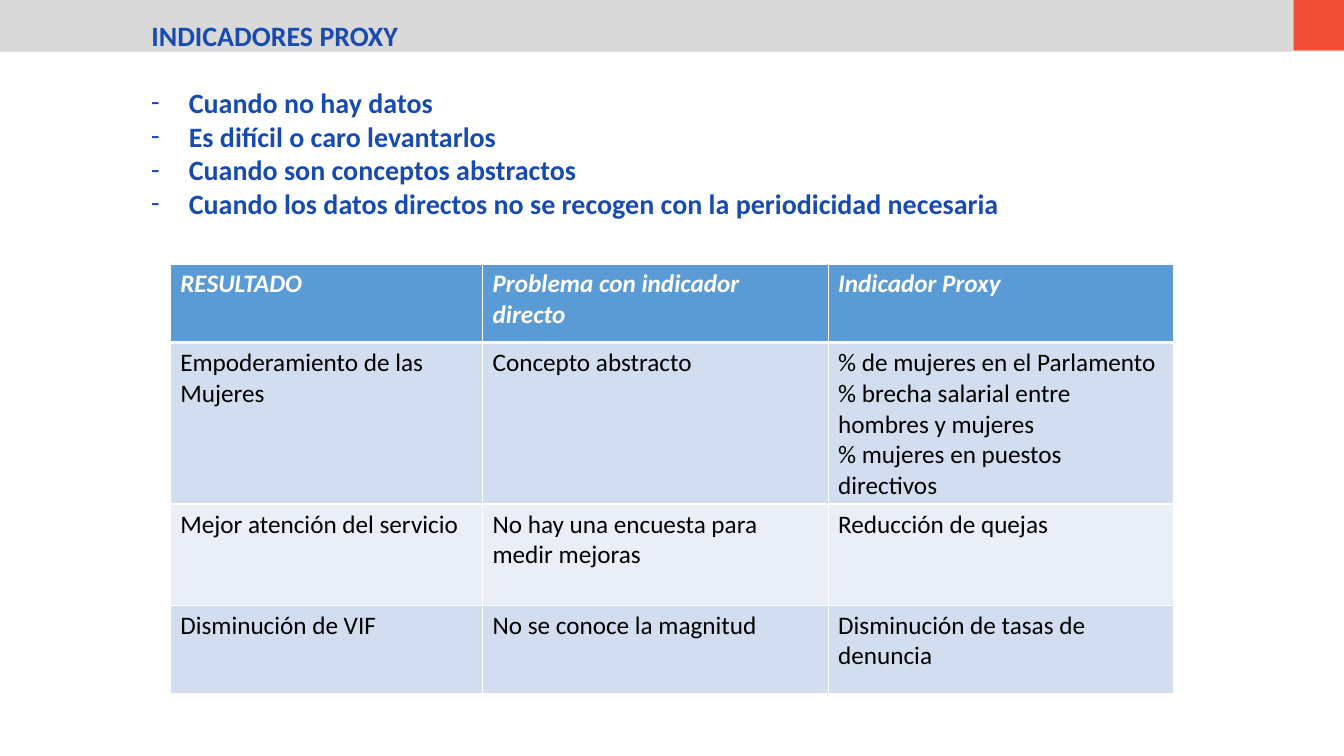
from dataclasses import dataclass

from lxml import etree
from pptx import Presentation
from pptx import util as u
from pptx.dml.color import RGBColor
from pptx.enum import shapes, text
from pptx.oxml.ns import qn

FACE = "Calibri"
HUES = {
    "gray": "D9D9D9", "red": "F14E36", "blue": "184BB2",
    "head": "5B9BD5", "dark": "D2DEEF", "light": "EAEFF7",
    "white": "FFFFFF", "black": "000000",
}


@dataclass
class Bar:
    left: float
    width: float
    height: float
    hue: str


@dataclass
class Row:
    height: float
    hue: str
    cells: tuple[str, ...]


BARS = [Bar(0, 33.87, 1.3, "gray"), Bar(32.6, 1.27, 1.27, "red")]
POINTS = [
    "Cuando no hay datos",
    "Es difícil o caro levantarlos",
    "Cuando son conceptos abstractos",
    "Cuando los datos directos no se recogen con la periodicidad necesaria",
]
WIDTHS = [7.87, 8.71, 8.71]
ROWS = [
    Row(1.98, "head", ("RESULTADO", "Problema con indicador directo",
                       "Indicador Proxy")),
    Row(4.07, "dark", ("Empoderamiento de las Mujeres", "Concepto abstracto",
                       "% de mujeres en el Parlamento\n"
                       "% brecha salarial entre hombres y mujeres\n"
                       "% mujeres en puestos directivos")),
    Row(2.55, "light", ("Mejor atención del servicio",
                        "No hay una encuesta para medir mejoras",
                        "Reducción de quejas")),
    Row(2.24, "dark", ("Disminución de VIF", "No se conoce la magnitud",
                       "Disminución de tasas de denuncia")),
]


def color(hue: str) -> RGBColor:
    return RGBColor.from_string(HUES[hue])


def style(para, size: int, hue: str, bold: bool, slant: bool = False) -> None:
    font = para.font
    font.name, font.size = FACE, u.Pt(size)
    font.bold, font.italic = bold, slant
    font.color.rgb = color(hue)


def draw_bar(slide, bar: Bar) -> None:
    shape = slide.shapes.add_shape(
        shapes.MSO_SHAPE.RECTANGLE, u.Cm(bar.left), 0,
        u.Cm(bar.width), u.Cm(bar.height))
    shape.shadow.inherit = False
    shape.fill.solid()
    shape.fill.fore_color.rgb = color(bar.hue)
    shape.line.fill.background()


def add_dash(para) -> None:
    props = para._p.get_or_add_pPr()
    props.set("marL", str(u.Cm(0.95)))
    props.set("indent", str(-u.Cm(0.95)))
    etree.SubElement(props, qn("a:buFont"), typeface=FACE)
    etree.SubElement(props, qn("a:buChar"), char="-")


def add_edge(cell, side: str, width: int) -> None:
    props = cell._tc.get_or_add_tcPr()
    line = etree.SubElement(props, qn(f"a:ln{side}"), w=str(u.Pt(width)))
    fill = etree.SubElement(line, qn("a:solidFill"))
    etree.SubElement(fill, qn("a:srgbClr"), val=HUES["white"])


def draw_table(slide) -> None:
    table = slide.shapes.add_table(
        len(ROWS), len(WIDTHS), u.Cm(4.29), u.Cm(6.65),
        u.Cm(sum(WIDTHS)), u.Cm(sum(row.height for row in ROWS))).table
    for col, width in zip(table.columns, WIDTHS):
        col.width = u.Cm(width)
    for r, row in enumerate(ROWS):
        table.rows[r].height = u.Cm(row.height)
        head = r == 0
        # The rule under the header is thicker than the rest
        edges = {"L": 1, "R": 1, "T": 3 if r == 1 else 1, "B": 3 if head else 1}
        for c, words in enumerate(row.cells):
            cell = table.cell(r, c)
            cell.text = words
            for side, width in edges.items():
                add_edge(cell, side, width)
            cell.fill.solid()
            cell.fill.fore_color.rgb = color(row.hue)
            for para in cell.text_frame.paragraphs:
                style(para, 18, "white" if head else "black", head, head)


def main() -> None:
    deck = Presentation()
    deck.slide_width, deck.slide_height = u.Cm(33.87), u.Cm(19.05)
    slide = deck.slides.add_slide(deck.slide_layouts[5])

    # Top band
    for bar in BARS:
        draw_bar(slide, bar)

    # Title, brought in front of the band
    title = slide.shapes.title
    title.element.getparent().append(title.element)
    title.left, title.top = u.Cm(3.56), u.Cm(0.33)
    title.width, title.height = u.Cm(27.23), u.Cm(1.1)
    frame = title.text_frame
    frame.text = "INDICADORES PROXY"
    frame.auto_size = text.MSO_AUTO_SIZE.NONE
    frame.vertical_anchor = text.MSO_ANCHOR.TOP
    frame.paragraphs[0].alignment = text.PP_ALIGN.LEFT
    style(frame.paragraphs[0], 20, "blue", True)

    # Reasons to use a proxy
    box = slide.shapes.add_textbox(u.Cm(3.56), u.Cm(2.03), u.Cm(27.23), u.Cm(4.55))
    box.text_frame.word_wrap = True
    box.text_frame.text = "\n".join(POINTS)
    for para in box.text_frame.paragraphs:
        add_dash(para)
        style(para, 20, "blue", True)

    # Examples
    draw_table(slide)
    deck.save("out.pptx")


if __name__ == "__main__":
    main()
